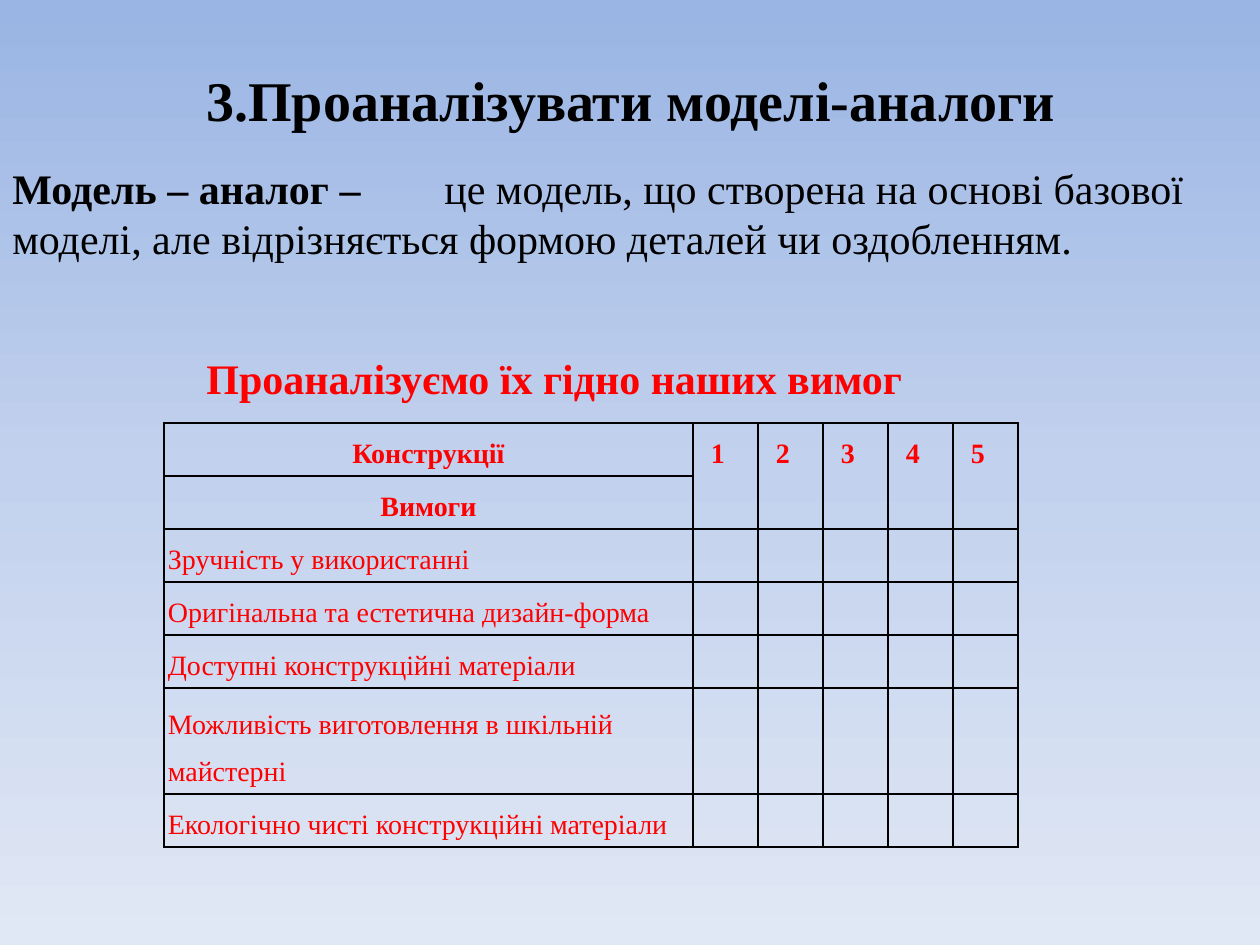
"""Build a slide that defines an analog model and tabulates design requirements."""
from copy import deepcopy

from lxml.etree import SubElement
from pptx import Presentation
from pptx.dml.color import RGBColor
from pptx.enum.text import MSO_ANCHOR, PP_ALIGN
from pptx.oxml.ns import qn
from pptx.util import Pt

PX = 914400 / 126
FONT = "Times New Roman"
BLACK = RGBColor(0x00, 0x00, 0x00)
RED = RGBColor(0xFF, 0x00, 0x00)
SKY = [
    RGBColor(0x9A, 0xB5, 0xE4),
    RGBColor(0xC2, 0xD1, 0xED),
    RGBColor(0xE1, 0xE8, 0xF5),
]


def px(length):
    return round(length * PX)


def write(paragraph, text, size=16, color=RED, bold=True, align=PP_ALIGN.LEFT, spacing=1.0):
    paragraph.alignment = align
    paragraph.line_spacing = spacing
    run = paragraph.add_run()
    run.text = text
    run.font.name = FONT
    run.font.size = Pt(size)
    run.font.bold = bold
    run.font.color.rgb = color


presentation = Presentation()
presentation.slide_width = px(1260)
presentation.slide_height = px(945)
slide = presentation.slides.add_slide(presentation.slide_layouts[6])

backdrop = slide.background.fill
backdrop.gradient()
backdrop.gradient_angle = 270
stop_list = next(slide.element.iter(qn("a:gsLst")))
stop_list.append(deepcopy(stop_list[0]))
for index, (stop, shade) in enumerate(zip(backdrop.gradient_stops, SKY)):
    stop.position = index / 2
    stop.color.rgb = shade

title = slide.shapes.add_textbox(px(194), px(26), px(897), px(102)).text_frame
title.word_wrap = False
write(title.paragraphs[0], "3.Проаналізувати моделі-аналоги", size=32, color=BLACK, spacing=1.5)

definition = slide.shapes.add_textbox(0, px(155), px(1235), px(115)).text_frame
definition.word_wrap = True
definition.vertical_anchor = MSO_ANCHOR.MIDDLE
sentence = definition.paragraphs[0]
write(sentence, "Модель – аналог –\t", size=24, color=BLACK)
write(
    sentence,
    "це модель, що створена на основі базової моделі, "
    "але відрізняється формою деталей чи оздобленням.",
    size=24, color=BLACK, bold=False,
)
tab_list = SubElement(sentence._p.get_or_add_pPr(), qn("a:tabLst"))
SubElement(tab_list, qn("a:tab"), pos=str(px(432)), algn="l")

requirements = [
    "Конструкції",
    "Вимоги",
    "Зручність у використанні",
    "Оригінальна та естетична дизайн-форма",
    "Доступні конструкційні матеріали",
    "Можливість виготовлення в шкільній майстерні",
    "Екологічно чисті конструкційні матеріали",
]
column_widths = [529] + [65] * 5
row_heights = [53] * 5 + [106, 53]
analysis = slide.shapes.add_table(
    len(row_heights), len(column_widths),
    px(164), px(423), px(sum(column_widths)), px(sum(row_heights)),
).table
analysis.first_row = False
analysis.horz_banding = False
for column, width in zip(analysis.columns, column_widths):
    column.width = px(width)
for row, height in zip(analysis.rows, row_heights):
    row.height = px(height)

for row_index, requirement in enumerate(requirements):
    for column_index in range(len(column_widths)):
        cell = analysis.cell(row_index, column_index)
        properties = cell._tc.get_or_add_tcPr()
        merged_side = {0: "lnB", 1: "lnT"}.get(row_index) if column_index else None
        for side in ("lnL", "lnR", "lnT", "lnB"):
            if side != merged_side:
                border = SubElement(properties, qn(f"a:{side}"), w=str(Pt(1)))
                ink = SubElement(border, qn("a:solidFill"))
                SubElement(ink, qn("a:srgbClr"), val=str(BLACK))
        cell.fill.background()
        if column_index == 0 or row_index == 0:
            cell.margin_left = cell.margin_right = px(4)
            cell.margin_top = cell.margin_bottom = 0
        if column_index == 0:
            heading = row_index < 2
            write(
                cell.text_frame.paragraphs[0], requirement, bold=heading, spacing=1.5,
                align=PP_ALIGN.CENTER if heading else PP_ALIGN.LEFT,
            )
        elif row_index == 0:
            number = cell.text_frame.paragraphs[0]
            write(number, str(column_index), spacing=1.5)
            number._p.get_or_add_pPr().set("marL", str(px(14)))
analysis.cell(5, 0).vertical_anchor = MSO_ANCHOR.MIDDLE
for column_index in range(1, len(column_widths)):
    analysis.cell(0, column_index).merge(analysis.cell(1, column_index))

prompt = slide.shapes.add_textbox(px(194), px(346), px(903), px(102)).text_frame
prompt.word_wrap = True
write(prompt.paragraphs[0], "Проаналізуємо їх гідно наших вимог", size=24)

presentation.save("out.pptx")
